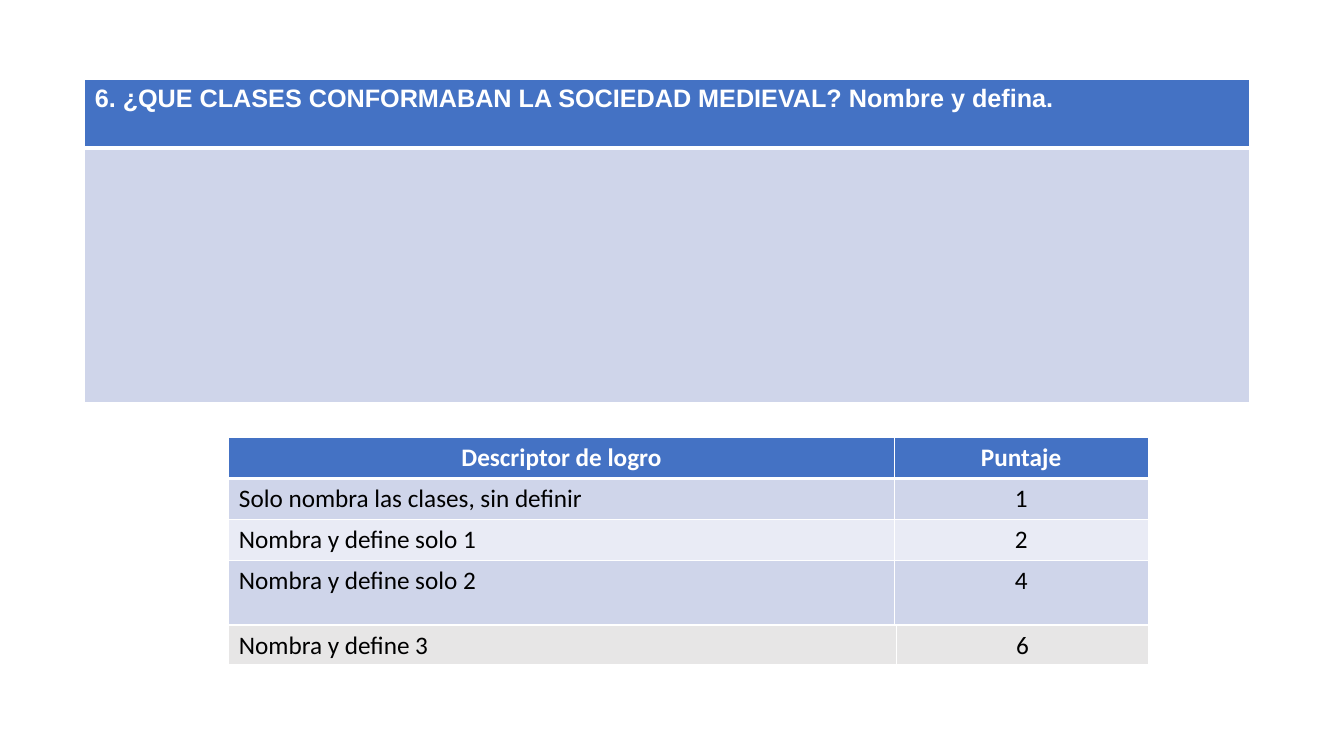
from lxml import etree
from pptx import Presentation
from pptx.dml.color import RGBColor
from pptx.enum.text import PP_ALIGN
from pptx.oxml.ns import qn
from pptx.util import Inches, Pt

LEFT, CENTER, JUSTIFY = PP_ALIGN.LEFT, PP_ALIGN.CENTER, PP_ALIGN.JUSTIFY
SLIDE_W, SLIDE_H = Inches(13.33), Inches(7.5)

WHITE, BLACK = "FFFFFF", "000000"
HEADER, BAND, LIGHT_BAND, GRAY = "4472C4", "CFD5EA", "E9EBF5", "E7E6E6"

QUESTION = "6. ¿QUE CLASES CONFORMABAN LA SOCIEDAD MEDIEVAL? Nombre y defina."
RUBRIC = [
    ("Descriptor de logro", "Puntaje"),
    ("Solo nombra las clases, sin definir", "1"),
    ("Nombra y define solo 1", "2"),
    ("Nombra y define solo 2", "4"),
]
TOP_SCORE = ("Nombra y define 3", "6")


def rgb(value):
    return RGBColor.from_string(value)


def across(percent):
    return round(SLIDE_W * percent / 100)


def down(percent):
    return round(SLIDE_H * percent / 100)


def set_borders(cell, bottom):
    """White cell edges, 1 pt except for the given bottom width."""
    properties = cell._tc.get_or_add_tcPr()
    edges = (("L", 1), ("R", 1), ("T", 1), ("B", bottom))
    for position, (side, width) in enumerate(edges):
        line = etree.Element(qn(f"a:ln{side}"), w=str(Pt(width)))
        fill = etree.SubElement(line, qn("a:solidFill"))
        etree.SubElement(fill, qn("a:srgbClr"), val=WHITE)
        properties.insert(position, line)


def fill_cell(cell, text, fill, color=BLACK, bold=False, font="Calibri",
              align=LEFT, bottom=1):
    cell.fill.solid()
    cell.fill.fore_color.rgb = rgb(fill)
    set_borders(cell, bottom)
    cell.text = text
    paragraph = cell.text_frame.paragraphs[0]
    paragraph.alignment = align
    paragraph.font.name = font
    paragraph.font.size = Pt(18)
    paragraph.font.bold = bold
    paragraph.font.color.rgb = rgb(color)


def add_grid(slide, left, top, columns, rows):
    """Empty table; all lengths are percentages of the slide's size."""
    table = slide.shapes.add_table(
        len(rows), len(columns), across(left), down(top),
        across(sum(columns)), down(sum(rows))).table
    for column, width in zip(table.columns, columns):
        column.width = across(width)
    for row, height in zip(table.rows, rows):
        row.height = down(height)
    return table


def add_question(slide, left, top, width, rows):
    table = add_grid(slide, left, top, [width], rows)
    fill_cell(table.cell(0, 0), QUESTION, HEADER, WHITE, True, "Arial", bottom=3)
    fill_cell(table.cell(1, 0), "", BAND)


def add_rubric(slide, left, top, columns, rows):
    table = add_grid(slide, left, top, columns, rows)
    for r, texts in enumerate(RUBRIC):
        for c, text in enumerate(texts):
            cell = table.cell(r, c)
            if r == 0:
                fill_cell(cell, text, HEADER, WHITE, True, align=CENTER, bottom=3)
            else:
                fill_cell(cell, text, BAND if r % 2 else LIGHT_BAND,
                          align=CENTER if c else LEFT)


def add_top_score(slide, left, top, columns, height):
    table = add_grid(slide, left, top, columns, [height])
    for c, (text, align) in enumerate(zip(TOP_SCORE, (JUSTIFY, CENTER))):
        fill_cell(table.cell(0, c), text, GRAY, align=align, bottom=3)


def main():
    presentation = Presentation()
    presentation.slide_width, presentation.slide_height = SLIDE_W, SLIDE_H
    slide = presentation.slides.add_slide(presentation.slide_layouts[6])
    add_question(slide, 6.3, 10.53, 86.65, [9.07, 33.6])
    add_rubric(slide, 17.03, 57.87, [49.5, 18.9], [5.4, 5.4, 5.4, 9.4])
    add_top_score(slide, 17.03, 82.67, [49.65, 18.8], 5.4)
    presentation.save("out.pptx")


if __name__ == "__main__":
    main()
